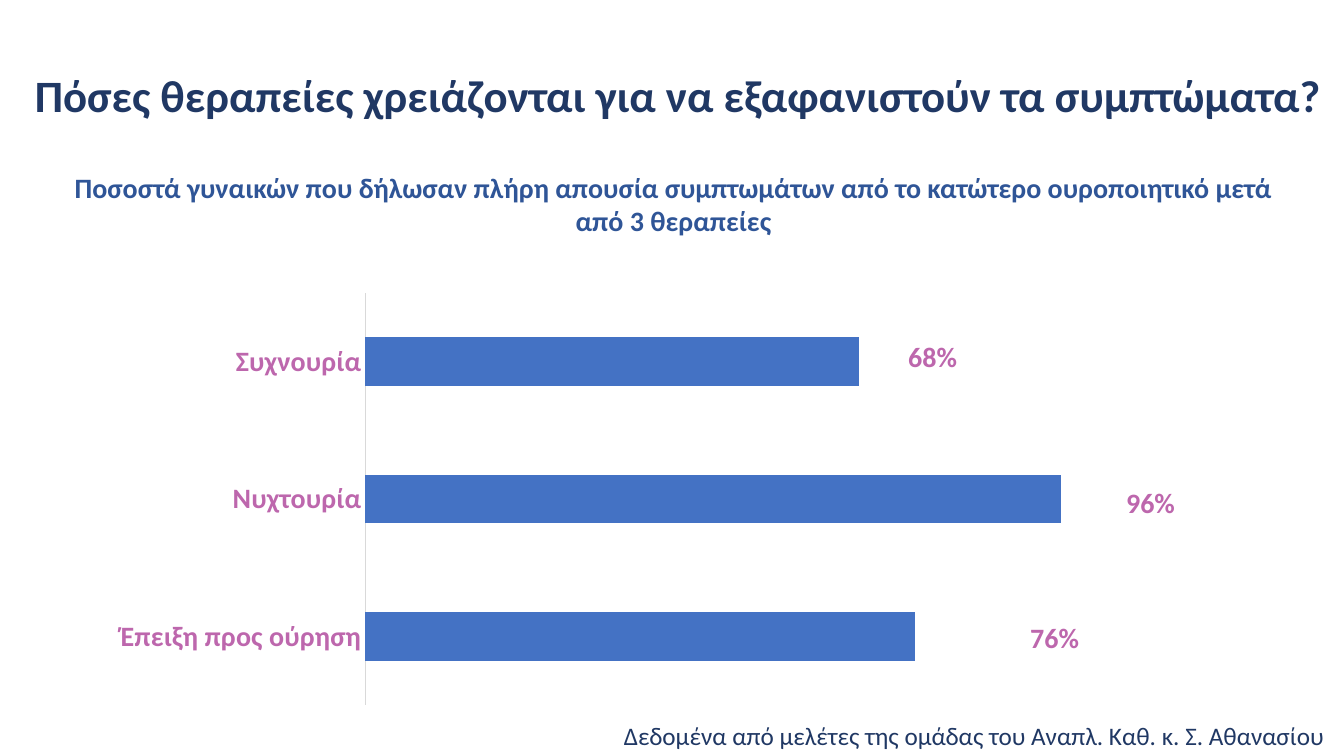
from pptx import Presentation
from pptx import util as u
from pptx.chart.data import CategoryChartData
from pptx.dml.color import RGBColor
from pptx.enum import chart as ch, text as t
from pptx.oxml import parse_xml
from pptx.oxml.ns import nsdecls

WIDE, HIGH = u.Inches(13.33), u.Inches(7.5)
FONT = "Calibri"
NAVY = RGBColor(0x20, 0x38, 0x64)
BLUE = RGBColor(0x2F, 0x55, 0x97)
BAR = RGBColor(0x44, 0x72, 0xC4)
PINK = RGBColor(0xBD, 0x67, 0xAD)
GREY = RGBColor(0xD9, 0xD9, 0xD9)

BARS = [("Έπειξη προς ούρηση", 79), ("Νυχτουρία", 100), ("Συχνουρία", 71)]
RATES = [("68%", 66.84, 44.27), ("96%", 83.05, 63.6), ("76%", 75.92, 81.47)]


def place(x, y, w, h):
    return [round(side * part / 100)
            for side, part in ((WIDE, x), (HIGH, y), (WIDE, w), (HIGH, h))]


def style(font, size, color, bold=True):
    font.name = FONT
    font.size = u.Pt(size)
    font.bold = bold
    font.color.rgb = color


def write(frame, words, size, color, bold=True, align=t.PP_ALIGN.LEFT, wrap=True):
    frame.text = words
    frame.word_wrap = wrap
    para = frame.paragraphs[0]
    para.alignment = align
    style(para.font, size, color, bold)
    return para


def add_title(slide, words, area):
    title = slide.shapes.title
    title.left, title.top, title.width, title.height = place(*area)
    frame = title.text_frame
    para = write(frame, words, 32, NAVY, align=t.PP_ALIGN.CENTER)
    para.line_spacing = 0.9
    frame.vertical_anchor = t.MSO_ANCHOR.MIDDLE
    frame.auto_size = t.MSO_AUTO_SIZE.NONE


def add_text(slide, words, area, size, color, **look):
    box = slide.shapes.add_textbox(*place(*area))
    write(box.text_frame, words, size, color, **look)


def set_plot(chart, x, y, w, h):
    area = chart.plots[0]._element.getparent()
    for old in area.findall("{*}layout"):
        area.remove(old)
    area.insert(0, parse_xml(
        f'<c:layout {nsdecls("c")}><c:manualLayout>'
        '<c:layoutTarget val="inner"/><c:xMode val="edge"/><c:yMode val="edge"/>'
        f'<c:x val="{x}"/><c:y val="{y}"/><c:w val="{w}"/><c:h val="{h}"/>'
        '</c:manualLayout></c:layout>'))


def add_bars(slide, bars, area):
    data = CategoryChartData()
    data.categories = [name for name, _ in bars]
    data.add_series("Series 1", [value for _, value in bars])
    chart = slide.shapes.add_chart(
        ch.XL_CHART_TYPE.BAR_CLUSTERED, *place(*area), data).chart
    chart.has_legend = False
    chart.has_title = False
    chart.font.name = FONT
    chart.font.size = u.Pt(10)
    plot = chart.plots[0]
    plot.gap_width = 182
    plot.vary_by_categories = False
    fill = plot.series[0].format.fill
    fill.solid()
    fill.fore_color.rgb = BAR
    names = chart.category_axis
    names.major_tick_mark = ch.XL_TICK_MARK.NONE
    names.format.line.color.rgb = GREY
    names.format.line.width = u.Pt(0.75)
    style(names.tick_labels.font, 20, PINK)
    scale = chart.value_axis
    scale.minimum_scale, scale.maximum_scale = 0, 120
    scale.has_major_gridlines = False
    scale.visible = False
    set_plot(chart, 0.23, 0.02, 0.72, 0.96)


def main():
    deck = Presentation()
    deck.slide_width, deck.slide_height = WIDE, HIGH
    slide = deck.slides.add_slide(deck.slide_layouts[5])
    add_bars(slide, BARS, (7.35, 37.6, 86.27, 56.8))
    add_title(slide, "Πόσες θεραπείες χρειάζονται για να εξαφανιστούν τα συμπτώματα? ",
              (1.73, 4, 98.27, 17.87))
    add_text(slide, "Ποσοστά γυναικών που δήλωσαν πλήρη απουσία συμπτωμάτων "
             "από το κατώτερο ουροποιητικό μετά από 3 θεραπείες",
             (3.23, 21.87, 93.77, 10.27), 20, BLUE, align=t.PP_ALIGN.CENTER)
    for rate, x, y in RATES:
        add_text(slide, rate, (x, y, 5.18, 5.87), 20, PINK, wrap=False)
    add_text(slide, "Δεδομένα από μελέτες της ομάδας του Αναπλ. Καθ. κ. Σ. Αθανασίου",
             (45.69, 94.67, 54.31, 5.33), 18, NAVY, bold=False)
    deck.save("out.pptx")


if __name__ == "__main__":
    main()
